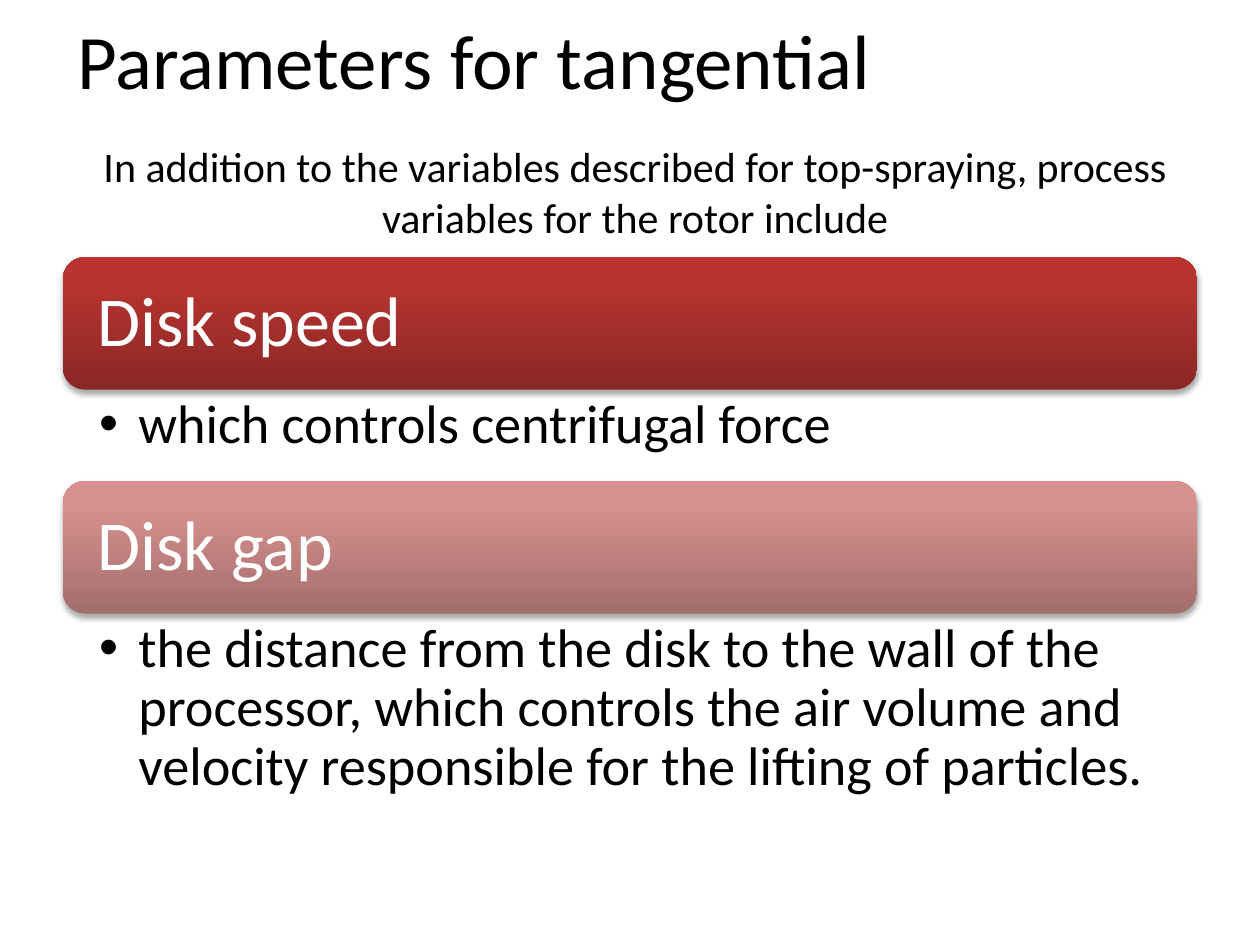
"""Build the slide on process parameters for tangential spraying."""
import copy
import dataclasses

import lxml.etree
import pptx
import pptx.dml.color
import pptx.enum.shapes
import pptx.enum.text
import pptx.oxml.ns
import pptx.util

Pt = pptx.util.Pt
qn = pptx.oxml.ns.qn
Align = pptx.enum.text.PP_ALIGN
Anchor = pptx.enum.text.MSO_ANCHOR


@dataclasses.dataclass(frozen=True)
class Theme:
    font: str = "Calibri"
    ink: str = "000000"
    light: str = "FFFFFF"
    title: float = 44
    intro: float = 24
    head: float = 40
    body: float = 31
    red: tuple = ("8A2725", "B63430", "BA332E")
    pink: tuple = ("A26E6C", "D6908E", "D88F8E")
    stops: tuple = (0, 0.8, 1)


@dataclasses.dataclass(frozen=True)
class Box:
    left: float
    top: float
    width: float
    height: float


@dataclasses.dataclass(frozen=True)
class Topic:
    head: str
    text: str
    tints: tuple
    depth: float


THEME = Theme()
LEFT, WIDTH, BAR, START = 36, 648, 75.6, 147
TOPICS = (
    Topic("Disk speed", "which controls centrifugal force", THEME.red, 52.4),
    Topic(
        "Disk gap",
        "the distance from the disk to the wall of the processor, which controls "
        "the air volume and velocity responsible for the lifting of particles.",
        THEME.pink,
        111,
    ),
)


def place(shape, box: Box) -> None:
    """Move and size a shape."""
    shape.left, shape.top = Pt(box.left), Pt(box.top)
    shape.width, shape.height = Pt(box.width), Pt(box.height)


def write(shape, text: str, size: float, color: str, align=Align.LEFT,
          anchor=Anchor.TOP, pads: tuple = (7.2, 3.6, 7.2, 3.6), pitch: float = 1.0):
    """Fill a shape with one formatted paragraph and return it."""
    frame = shape.text_frame
    frame.text = text
    frame.word_wrap = True
    frame.auto_size = pptx.enum.text.MSO_AUTO_SIZE.NONE
    frame.vertical_anchor = anchor
    frame.margin_left, frame.margin_top, frame.margin_right, frame.margin_bottom = map(Pt, pads)
    para = frame.paragraphs[0]
    para.alignment, para.line_spacing = align, pitch
    para.space_before = Pt(0)
    for run in para.runs:
        run.font.name, run.font.size = THEME.font, Pt(size)
        run.font.color.rgb = pptx.dml.color.RGBColor.from_string(color)
    return para


def shade(shape, tints: tuple) -> None:
    """Give a shape a three-stop upward gradient."""
    shape.fill.gradient()
    shape.fill.gradient_angle = 90
    stops = shape._element.spPr.find(".//" + qn("a:gsLst"))
    stops.append(copy.deepcopy(stops[-1]))
    for stop, tint, spot in zip(shape.fill.gradient_stops, tints, THEME.stops):
        stop.color.rgb = pptx.dml.color.RGBColor.from_string(tint)
        stop.position = spot


def lift(shape) -> None:
    """Put a soft shadow below a shape."""
    shape.shadow.inherit = False
    effects = shape._element.spPr.find(qn("a:effectLst"))
    shadow = lxml.etree.SubElement(
        effects, qn("a:outerShdw"), blurRad=str(Pt(3.1)), dist=str(Pt(1.8)),
        dir="5400000", rotWithShape="0")
    color = lxml.etree.SubElement(shadow, qn("a:srgbClr"), val=THEME.ink)
    lxml.etree.SubElement(color, qn("a:alpha"), val="35000")


def draw_bar(slide, topic: Topic, top: float) -> None:
    """Draw the heading bar of a topic."""
    kind = pptx.enum.shapes.MSO_SHAPE.ROUNDED_RECTANGLE
    bar = slide.shapes.add_shape(kind, Pt(LEFT), Pt(top), Pt(WIDTH), Pt(BAR))
    shade(bar, topic.tints)
    bar.line.fill.background()
    lift(bar)
    write(bar, topic.head, THEME.head, THEME.light, anchor=Anchor.MIDDLE,
          pads=(16, 12, 16, 12), pitch=0.9)


def draw_list(holder, topic: Topic, top: float) -> None:
    """Write the bulleted text of a topic."""
    place(holder, Box(LEFT, top, WIDTH, topic.depth))
    para = write(holder, topic.text, THEME.body, THEME.ink,
                 pads=(20.6, 4.3, 22, 4.3), pitch=0.9)
    props = para._p.get_or_add_pPr()
    props.set("marL", str(Pt(22.5)))
    props.set("indent", str(Pt(-22.5)))


def main() -> None:
    """Build and save the deck."""
    deck = pptx.Presentation()
    deck.slide_width, deck.slide_height = Pt(720), Pt(540)
    slide = deck.slides.add_slide(deck.slide_layouts.get_by_name("Two Content"))
    title, *lists = list(slide.placeholders)[:3]
    place(title, Box(37, 3.6, 471, 60.5))
    write(title, "Parameters for tangential", THEME.title, THEME.ink)
    intro = slide.shapes.add_textbox(Pt(48), Pt(77), Pt(630), Pt(68))
    write(intro, "In addition to the variables described for top-spraying, process "
          "variables for the rotor include", THEME.intro, THEME.ink, Align.CENTER)
    top = START
    for topic, holder in zip(TOPICS, lists):
        draw_bar(slide, topic, top)
        draw_list(holder, topic, top + BAR)
        top += BAR + topic.depth
    deck.save("out.pptx")


if __name__ == "__main__":
    main()
